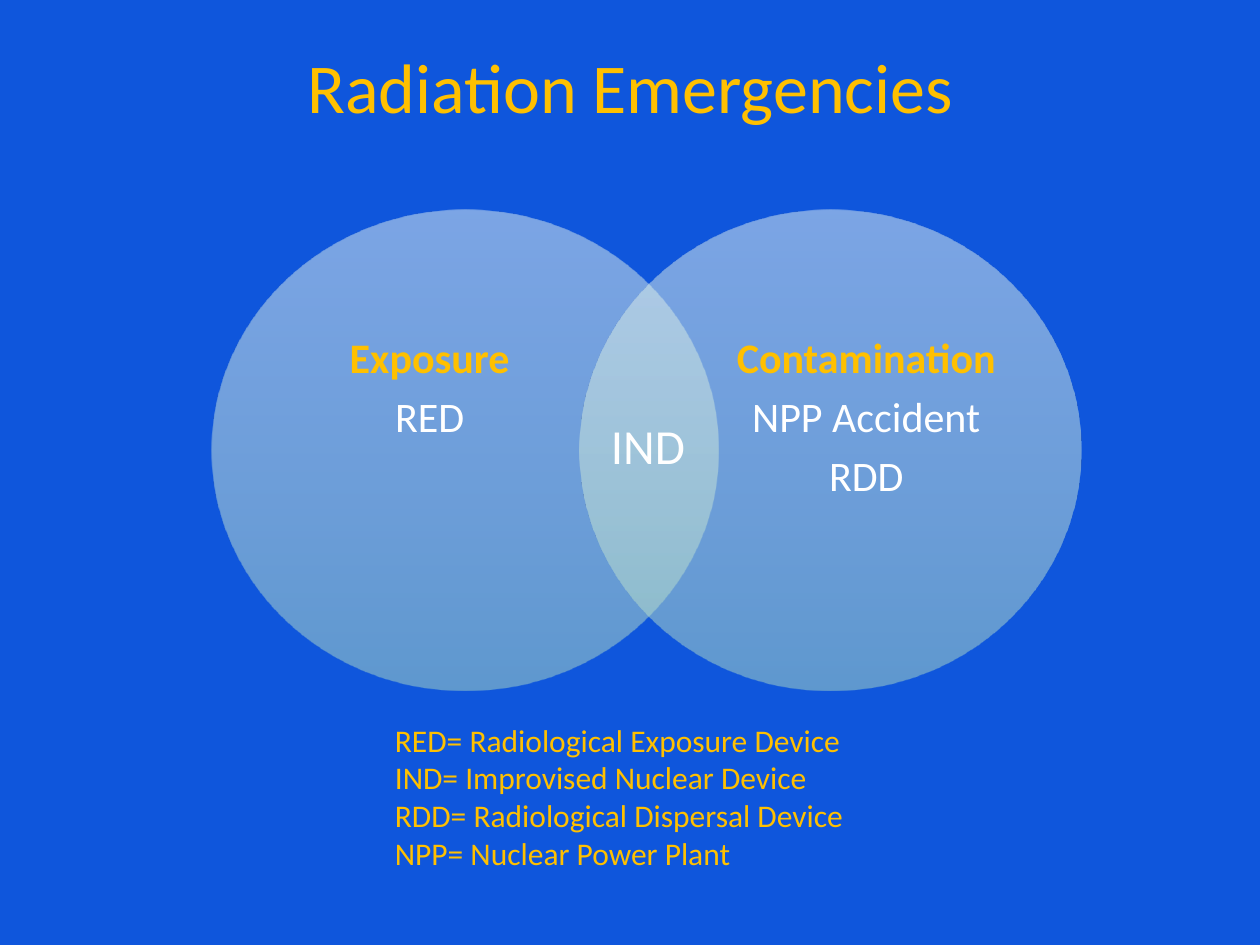
from lxml.etree import SubElement
from pptx import Presentation
from pptx.dml.color import RGBColor
from pptx.enum.shapes import MSO_SHAPE
from pptx.enum.text import MSO_ANCHOR, PP_ALIGN
from pptx.oxml.ns import qn
from pptx.util import Pt

BLUE, GOLD, WHITE = "0F56DC", "FFC000", "FFFFFF"
GRADIENT = [(0, "AEDBC2"), (35, "C7E5D4"), (100, "E9F5EF")]


def color(hex_value):
    return RGBColor.from_string(hex_value)


def add_text(page, place, lines, size, frame_format, paragraph_format):
    """Add a text box; lines holds (text, colour, bold) tuples."""
    frame = page.shapes.add_textbox(*map(Pt, place)).text_frame
    for name, value in frame_format.items():
        setattr(frame, name, value)
    for index, (text, hex_value, bold) in enumerate(lines):
        para = frame.add_paragraph() if index else frame.paragraphs[0]
        for name, value in paragraph_format.items():
            setattr(para, name, value)
        span = para.add_run()
        span.text = text
        for name, value in {"name": "Calibri", "size": Pt(size), "bold": bold}.items():
            setattr(span.font, name, value)
        span.font.color.rgb = color(hex_value)


deck = Presentation()
deck.slide_width, deck.slide_height = Pt(720), Pt(540)
page = deck.slides.add_slide(deck.slide_layouts[6])
page.background.fill.solid()
page.background.fill.fore_color.rgb = color(BLUE)

add_text(page, (36, 21.6, 648, 90), [("Radiation Emergencies", GOLD, False)], 40,
         {"word_wrap": True}, {"alignment": PP_ALIGN.CENTER})

# Overlapping circles, half transparent, shaded from the bottom up
for left, width in [(121.2, 289.2), (331.2, 286.6)]:
    circle = page.shapes.add_shape(
        MSO_SHAPE.OVAL, Pt(left), Pt(120), Pt(width), Pt(274.5))
    circle.shadow.inherit = False
    circle.line.fill.background()
    circle.fill.gradient()
    circle.fill.gradient_angle = 90
    stops = circle.fill._fill._gradFill.find(qn("a:gsLst"))
    for stop in list(stops):
        stops.remove(stop)
    for position, hex_value in GRADIENT:
        stop = SubElement(stops, qn("a:gs"), pos=str(position * 1000))
        shade = SubElement(stop, qn("a:srgbClr"), val=hex_value)
        SubElement(shade, qn("a:alpha"), val="50000")

label_frame = {"word_wrap": True, "vertical_anchor": MSO_ANCHOR.TOP, "margin_left": 0,
               "margin_right": 0, "margin_top": Pt(40), "margin_bottom": 0}
label_paragraph = {"alignment": PP_ALIGN.CENTER, "line_spacing": 0.9, "space_after": Pt(8)}
for left, width, heading, examples in [
    (162, 167, "Exposure", ["RED"]),
    (412.5, 165, "Contamination", ["NPP Accident", "RDD"]),
]:
    lines = [(heading, GOLD, True)] + [(text, WHITE, False) for text in examples]
    add_text(page, (left, 152.6, width, 209.5), lines, 24, label_frame, label_paragraph)

add_text(page, (342, 234, 63.4, 41), [("IND", WHITE, False)], 28,
         {"word_wrap": False}, {"alignment": PP_ALIGN.LEFT})

abbreviations = [
    "RED= Radiological Exposure Device",
    "IND= Improvised Nuclear Device",
    "RDD= Radiological Dispersal Device",
    "NPP= Nuclear Power Plant",
]
add_text(page, (218.6, 408.2, 309.6, 116.6),
         [(text, GOLD, False) for text in abbreviations], 18,
         {"word_wrap": False}, {"alignment": PP_ALIGN.LEFT})

deck.save("out.pptx")
